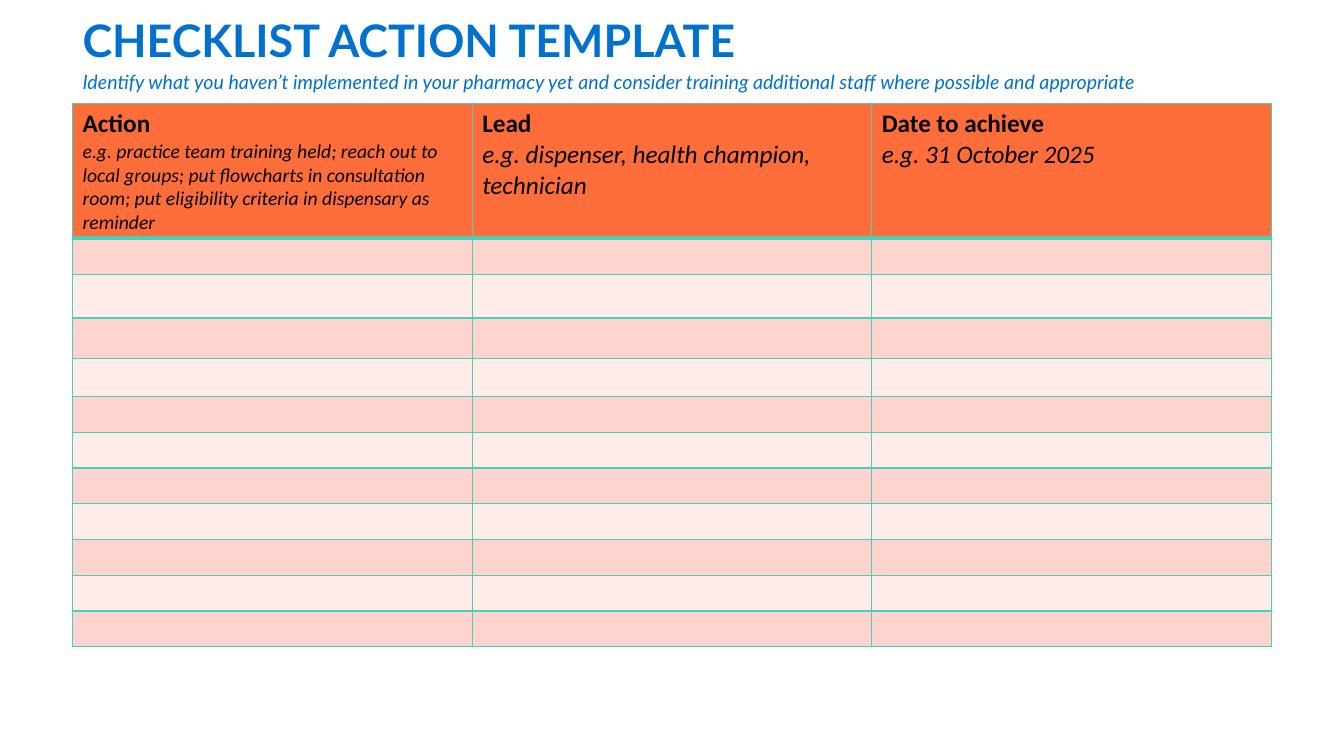
"""Build the checklist action template slide."""
from lxml import etree
from pptx import Presentation
from pptx.dml.color import RGBColor
from pptx.oxml.ns import qn
from pptx.util import Inches, Pt

TITLE = [
    ("CHECKLIST ACTION TEMPLATE", 32, True),
    ("Identify what you haven’t implemented in your pharmacy yet and consider "
     "training additional staff where possible and appropriate", 14, False),
]
HEADS = [
    ("Action", "e.g. practice team training held; reach out to local groups; "
     "put flowcharts in consultation room; put eligibility criteria in "
     "dispensary as reminder", 14),
    ("Lead", "e.g. dispenser, health champion, technician", 18),
    ("Date to achieve", "e.g. 31 October 2025", 18),
]
ROWS = [1.33, 0.36, 0.43, 0.4, 0.38] + [0.355] * 7
LEFT, WIDTH, TOP = 0.72, 11.89, 1.03

BLUE = RGBColor(0x00, 0x72, 0xCE)
BLACK = RGBColor(0, 0, 0)
ORANGE = RGBColor(0xFF, 0x6D, 0x3A)
BANDS = [RGBColor(0xFF, 0xEB, 0xE8), RGBColor(0xFF, 0xD4, 0xCE)]
TEAL = RGBColor(0x48, 0xD1, 0xBA)


def write(frame, lines, face, color, space=None):
    """Write each line as a bold or italic paragraph."""
    for i, (text, size, bold) in enumerate(lines):
        para = frame.paragraphs[0] if i == 0 else frame.add_paragraph()
        if space:
            para.line_spacing = space
        run = para.add_run()
        run.text = text
        font = run.font
        font.name, font.size = face, Pt(size)
        font.bold, font.italic = bold, not bold
        font.color.rgb = color


def edge(cell, low):
    """Draw the four cell borders, the bottom one at its own width."""
    props = cell._tc.get_or_add_tcPr()
    for i, side in enumerate(("lnL", "lnR", "lnT", "lnB")):
        width = low if side == "lnB" else 1
        line = etree.Element(qn("a:" + side), w=str(Pt(width)))
        fill = etree.SubElement(line, qn("a:solidFill"))
        etree.SubElement(fill, qn("a:srgbClr"), val=str(TEAL))
        props.insert(i, line)


def main():
    """Place the title and the table, then save."""
    deck = Presentation()
    deck.slide_width, deck.slide_height = Inches(13.33), Inches(7.5)
    slide = deck.slides.add_slide(deck.slide_layouts[6])

    box = slide.shapes.add_textbox(
        Inches(LEFT), 0, Inches(WIDTH), Inches(1.74))
    box.text_frame.word_wrap = True
    write(box.text_frame, TITLE, "Lato", BLUE, 1.15)

    table = slide.shapes.add_table(
        len(ROWS), len(HEADS), Inches(LEFT), Inches(TOP),
        Inches(WIDTH), Inches(sum(ROWS))).table
    for col in table.columns:
        col.width = Inches(WIDTH / len(HEADS))
    for r, high in enumerate(ROWS):
        table.rows[r].height = Inches(high)
        for c, (head, hint, size) in enumerate(HEADS):
            cell = table.cell(r, c)
            cell.fill.solid()
            cell.fill.fore_color.rgb = BANDS[r % 2] if r else ORANGE
            edge(cell, 1 if r else 3)
            if r == 0:
                lines = [(head, 18, True), (hint, size, False)]
                write(cell.text_frame, lines, "Calibri", BLACK)
            else:
                para = cell.text_frame.paragraphs[0]
                etree.SubElement(para._p, qn("a:endParaRPr"), sz="1200")

    deck.save("out.pptx")


if __name__ == "__main__":
    main()
